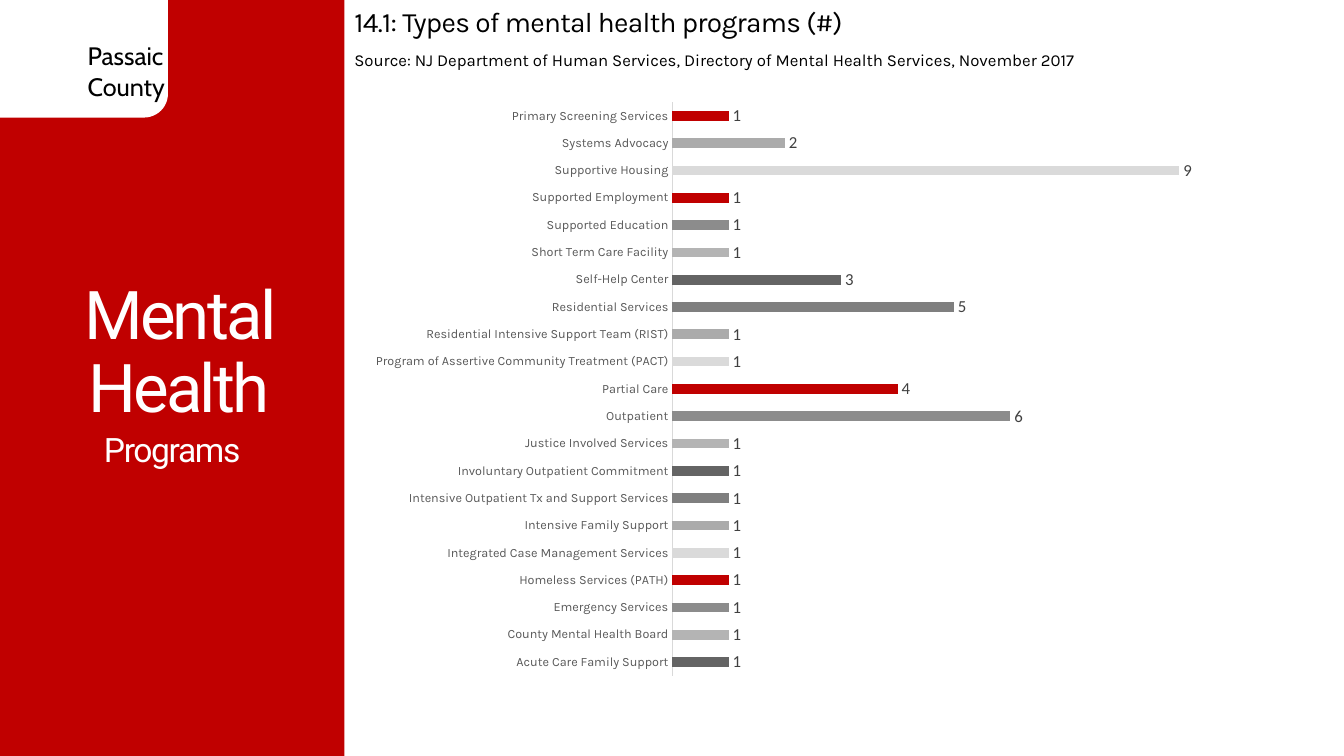
import dataclasses
import itertools

import pptx
import pptx.chart.data
import pptx.dml.color
import pptx.enum.chart
import pptx.enum.shapes
import pptx.enum.text
import pptx.util

SCALE = 9525


@dataclasses.dataclass(frozen=True)
class Theme:
    red: str = "C00000"
    white: str = "FFFFFF"
    black: str = "000000"
    label: str = "595959"
    value: str = "404040"
    rule: str = "D9D9D9"
    cycle: tuple = ("646464", "B4B4B4", "8C8C8C", "C00000", "DADADA", "ABABAB", "7F7F7F")
    head: int = 48
    subhead: int = 24
    title: int = 20
    county: int = 18
    body: int = 12
    small: int = 10
    tiny: int = 9


THEME = Theme()

COUNTS = {
    "Acute Care Family Support": 1,
    "County Mental Health Board": 1,
    "Emergency Services": 1,
    "Homeless Services (PATH)": 1,
    "Integrated Case Management Services": 1,
    "Intensive Family Support": 1,
    "Intensive Outpatient Tx and Support Services": 1,
    "Involuntary Outpatient Commitment": 1,
    "Justice Involved Services": 1,
    "Outpatient": 6,
    "Partial Care": 4,
    "Program of Assertive Community Treatment (PACT)": 1,
    "Residential Intensive Support Team (RIST)": 1,
    "Residential Services": 5,
    "Self-Help Center": 3,
    "Short Term Care Facility": 1,
    "Supported Education": 1,
    "Supported Employment": 1,
    "Supportive Housing": 9,
    "Systems Advocacy": 2,
    "Primary Screening Services": 1,
}


def px(*sizes):
    return [pptx.util.Emu(size * SCALE) for size in sizes]


def tint(code):
    return pptx.dml.color.RGBColor.from_string(code)


def style(font, face, size, color):
    font.name = face
    font.size = pptx.util.Pt(size)
    font.color.rgb = tint(color)


def add_block(slide, kind, box, color):
    block = slide.shapes.add_shape(kind, *px(*box))
    block.shadow.inherit = False
    block.fill.solid()
    block.fill.fore_color.rgb = tint(color)
    block.line.fill.background()


def add_text(slide, text, box, *, face, size, color=THEME.black,
             center=False, middle=False, track=0):
    frame = slide.shapes.add_textbox(*px(*box)).text_frame
    frame.word_wrap = True
    if middle:
        frame.vertical_anchor = pptx.enum.text.MSO_ANCHOR.MIDDLE
    for index, line in enumerate(text.split("\n")):
        para = frame.add_paragraph() if index else frame.paragraphs[0]
        if center:
            para.alignment = pptx.enum.text.PP_ALIGN.CENTER
            para.line_spacing = 0.9
        run = para.add_run()
        run.text = line
        style(run.font, face, size, color)
        if track:
            run.font._element.set("spc", str(track))


def add_bars(slide, counts, box):
    data = pptx.chart.data.CategoryChartData()
    data.categories = list(counts)
    data.add_series("Series 1", list(counts.values()))
    kind = pptx.enum.chart.XL_CHART_TYPE.BAR_CLUSTERED
    chart = slide.shapes.add_chart(kind, *px(*box), data).chart
    chart.has_legend = False
    chart.has_title = False
    style(chart.font, "Calibri", THEME.small, THEME.black)

    names = chart.category_axis
    names.major_tick_mark = pptx.enum.chart.XL_TICK_MARK.NONE
    names.format.line.color.rgb = tint(THEME.rule)
    names.format.line.width = pptx.util.Pt(0.75)
    style(names.tick_labels.font, "Karla", THEME.tiny, THEME.label)

    scale = chart.value_axis
    scale.minimum_scale = 0
    scale.maximum_scale = 10
    scale.has_major_gridlines = False
    scale.visible = False

    plot = chart.plots[0]
    plot.gap_width = 182
    plot.vary_by_categories = False
    plot.has_data_labels = True
    labels = plot.data_labels
    labels.show_value = True
    labels.position = pptx.enum.chart.XL_LABEL_POSITION.OUTSIDE_END
    style(labels.font, "Calibri", THEME.body, THEME.value)

    colors = list(itertools.islice(itertools.cycle(THEME.cycle), len(counts)))
    colors[-1] = THEME.red
    for index, color in enumerate(colors):
        fill = plot.series[0].points[index].format.fill
        fill.solid()
        fill.fore_color.rgb = tint(color)


def main():
    deck = pptx.Presentation()
    deck.slide_width, deck.slide_height = px(1280, 720)
    slide = deck.slides.add_slide(deck.slide_layouts[6])
    shape = pptx.enum.shapes.MSO_SHAPE

    add_block(slide, shape.RECTANGLE, (0, 0, 328, 720), THEME.red)
    add_block(slide, shape.ROUNDED_RECTANGLE, (-32, -24, 192, 136), THEME.white)
    add_text(slide, "Passaic\nCounty", (74, 34, 96, 68),
             face="Cabin", size=THEME.county)
    add_text(slide, "Mental Health", (0, 72, 341, 531), face="Roboto",
             size=THEME.head, color=THEME.white, center=True, middle=True, track=-200)
    add_text(slide, "Programs", (0, 408, 328, 44), face="Roboto",
             size=THEME.subhead, color=THEME.white, center=True, track=-100)
    add_text(slide, "14.1: Types of mental health programs (#)", (328, 0, 947, 42),
             face="Karla", size=THEME.title, track=-50)
    add_text(slide, "Source: NJ Department of Human Services, "
             "Directory of Mental Health Services, November 2017",
             (328, 43, 882, 29), face="Karla", size=THEME.body)
    add_bars(slide, COUNTS, (341, 86, 853, 569))

    deck.save("out.pptx")


if __name__ == "__main__":
    main()
